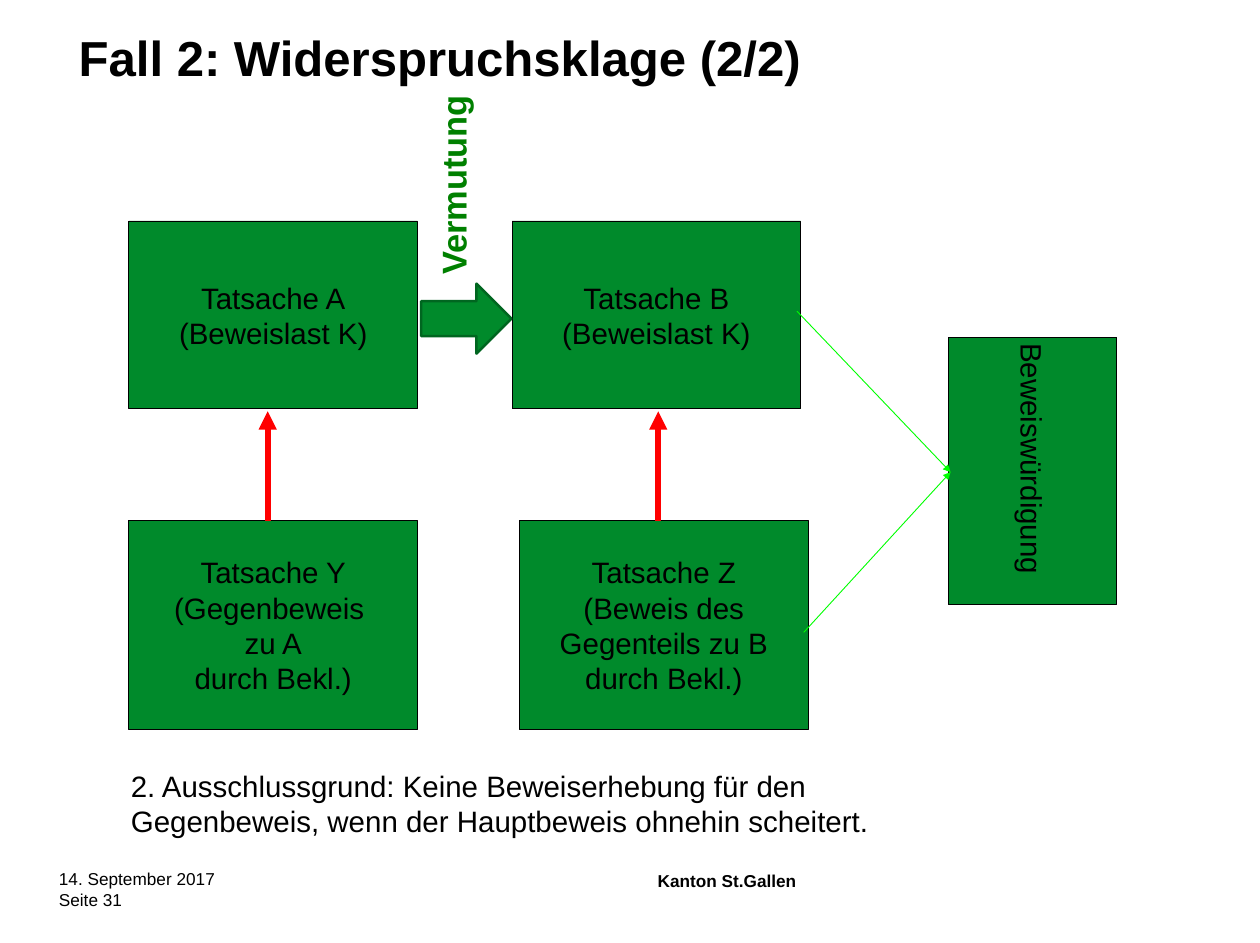
from dataclasses import dataclass

from lxml import etree
from pptx import Presentation
from pptx import util as u
from pptx.dml.color import RGBColor
from pptx.enum import shapes, text
from pptx.oxml import ns


@dataclass(frozen=True)
class Theme:
    font: str = "Arial"
    ink: str = "000000"
    box_green: str = "008A2B"
    arrow_edge: str = "006620"
    label_green: str = "008000"
    link_green: str = "00FF00"
    red: str = "FF0000"
    title_size: float = 40
    label_size: float = 28
    body_size: float = 24
    footer_size: float = 14


THEME = Theme()


def write(shape, lines, size, color=THEME.ink, bold=False, align=None,
          margins=(7.2, 3.6), wrap=True, direction=None):
    """Fill a shape's text frame, one paragraph per line."""
    frame = shape.text_frame
    frame.word_wrap = wrap
    frame.margin_left = frame.margin_right = u.Pt(margins[0])
    frame.margin_top = frame.margin_bottom = u.Pt(margins[1])
    if direction:
        shape.element.txBody.bodyPr.set("vert", direction)
    frame.text = "\n".join(lines)
    for paragraph in frame.paragraphs:
        paragraph.alignment = align
        font = paragraph.font
        font.name, font.size, font.bold = THEME.font, u.Pt(size), bold
        font.color.rgb = RGBColor.from_string(color)


def add_text(slide, box, line, size, **style):
    shape = slide.shapes.add_textbox(*map(u.Pt, box))
    write(shape, [line], size, **style)
    return shape


def add_filled(slide, kind, box, edge, edge_width):
    shape = slide.shapes.add_shape(kind, *map(u.Pt, box))
    shape.shadow.inherit = False
    shape.fill.solid()
    shape.fill.fore_color.rgb = RGBColor.from_string(THEME.box_green)
    shape.line.color.rgb = RGBColor.from_string(edge)
    shape.line.width = u.Pt(edge_width)
    return shape


def add_fact(slide, box, lines, direction=None):
    shape = add_filled(slide, shapes.MSO_SHAPE.RECTANGLE, box, THEME.ink, 0.75)
    shape.text_frame.vertical_anchor = text.MSO_ANCHOR.MIDDLE
    write(shape, lines, THEME.body_size, align=text.PP_ALIGN.CENTER,
          margins=(10, 5), wrap=False, direction=direction)


def add_arrow(slide, start, end, color, width):
    connector = slide.shapes.add_connector(
        shapes.MSO_CONNECTOR.STRAIGHT, *map(u.Pt, (*start, *end)))
    connector.line.color.rgb = RGBColor.from_string(color)
    connector.line.width = u.Pt(width)
    line = connector.line._get_or_add_ln()
    etree.SubElement(line, ns.qn("a:tailEnd"), type="triangle")
    etree.SubElement(connector.element.spPr, ns.qn("a:effectLst"))


def build_diagram(slide, box):
    left, top, width, height = box
    fact_width, upper_height, lower_height = 235, 153, 170
    lower_top = top + height - lower_height
    b_left, z_left = left + 312, left + 318

    # Facts and counter-facts
    facts = [
        (left, top, upper_height, ["Tatsache A", "(Beweislast K)"]),
        (b_left, top, upper_height, ["Tatsache B", "(Beweislast K)"]),
        (z_left, lower_top, lower_height,
         ["Tatsache Z", "(Beweis des", "Gegenteils zu B", "durch Bekl.)"]),
        (left, lower_top, lower_height,
         ["Tatsache Y", "(Gegenbeweis ", "zu A", "durch Bekl.)"]),
    ]
    for x, y, fact_height, lines in facts:
        add_fact(slide, (x, y, fact_width, fact_height), lines)

    # Assessment of evidence
    verdict_width, verdict_top = 137.5, top + 94.5
    verdict_left = left + width - verdict_width
    add_fact(slide, (verdict_left, verdict_top, verdict_width, 218),
             ["Beweiswürdigung"], direction="eaVert")

    # Red arrows from counter-facts to facts
    for x in (left + 113, left + 431):
        add_arrow(slide, (x, lower_top), (x, top + upper_height + 2),
                  THEME.red, 5)

    # Green links to the assessment
    target = (verdict_left + 2, verdict_top + 110)
    for start in ((z_left + fact_width - 3.5, lower_top + 91),
                  (b_left + fact_width - 3, top + 73.5)):
        add_arrow(slide, start, target, THEME.link_green, 0.75)

    # Presumption from A to B
    add_filled(slide, shapes.MSO_SHAPE.RIGHT_ARROW,
               (left + 238, top + 51, 73.5, 57), THEME.arrow_edge, 2)
    add_text(slide, (left + 243.5, top - 119, 48, 170), "Vermutung",
             THEME.label_size, color=THEME.label_green, bold=True,
             direction="vert270")


def build_footer(slide, box):
    left, top, width, height = box
    style = dict(size=THEME.footer_size, margins=(0, 0))
    date = add_text(slide, (left, top, 227, 17), "14. September 2017", **style)
    date.text_frame.paragraphs[0].line_spacing = u.Pt(17)
    add_text(slide, (left, top + 17.3, 230, 14.4), "Seite 31", **style)
    add_text(slide, (left + width - 409, top + 2, 409, 17),
             "Kanton St.Gallen", bold=True, **style)


def build_slide(slide):
    add_text(slide, (57, 19, 941, 108), "Fall 2: Widerspruchsklage (2/2)",
             THEME.title_size, bold=True)
    build_diagram(slide, (105, 180, 804.5, 414))
    add_text(slide, (99.5, 622, 692, 65.5),
             "2. Ausschlussgrund: Keine Beweiserhebung für den Gegenbeweis, "
             "wenn der Hauptbeweis ohnehin scheitert.", THEME.body_size)
    build_footer(slide, (48, 707, 896.5, 32))


def main():
    presentation = Presentation()
    presentation.slide_width = u.Pt(1026)
    presentation.slide_height = u.Pt(768)
    build_slide(presentation.slides.add_slide(presentation.slide_layouts[6]))
    presentation.save("out.pptx")


if __name__ == "__main__":
    main()
